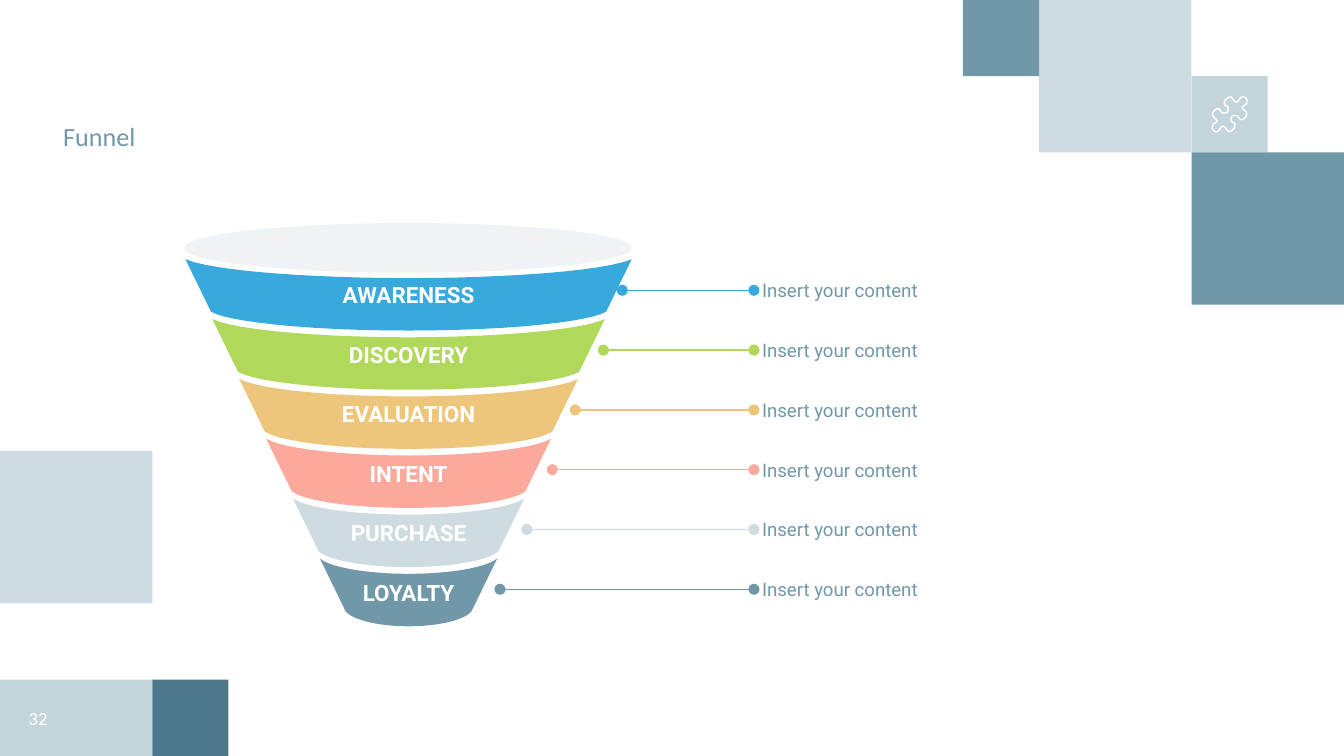
"""Build a slide with a six-stage marketing funnel and its callouts."""
from lxml.etree import SubElement
from pptx import Presentation
from pptx.dml.color import RGBColor
from pptx.enum.shapes import MSO_CONNECTOR, MSO_SHAPE
from pptx.enum.text import MSO_ANCHOR, PP_ALIGN
from pptx.oxml.ns import qn
from pptx.util import Inches, Pt

HUES = {
    "white": "FFFFFF", "steel": "7198A9", "mist": "CEDBE0", "deep": "4D778A",
    "pale": "EFF3F5", "blue": "37A9DD", "green": "B0D85B", "gold": "EDC67B",
    "coral": "FAA99C",
}
TITLE, PAGE, NOTE = "Funnel", "32", "Insert your content"
STAGES = [
    ("AWARENESS", "blue", 4.63),
    ("DISCOVERY", "green", 4.49),
    ("EVALUATION", "gold", 4.28),
    ("INTENT", "coral", 4.11),
    ("PURCHASE", "mist", 3.92),
    ("LOYALTY", "steel", 3.72),
]
WIDE, HIGH = 10, 10 * 9 / 16
UNIT = 0.567
RIGHT, FOOT = WIDE - 2 * UNIT, HIGH - UNIT
TILES = [
    (RIGHT, 2 * UNIT, 2, 2, "steel", 100),
    (RIGHT, UNIT, 1, 1, "steel", 41),
    (RIGHT - 2 * UNIT, 0, 2, 2, "mist", 100),
    (RIGHT - 3 * UNIT, 0, 1, 1, "steel", 100),
    (0, HIGH - 4 * UNIT, 2, 2, "mist", 100),
    (2 * UNIT, FOOT, 1, 1, "deep", 100),
    (0, FOOT, 2, 1, "steel", 41),
]
HALF = [
    (10, -6), (12, -7), (13, -9), (13, -11), (11, -13), (9, -13), (7, -11),
    (6, -9), (4, -9), (1, -13), (0, -13), (-3, -11), (-4, -9), (-4, -7),
    (-2, -6), (-1, -5), (-1, -3), (-2, -1), (-4, -1), (-6, -1), (-7, -3),
    (-8, -4), (-10, -4), (-12, -2), (-13, 0), (-12, 2), (-9, 5),
]
MID, TOP, STEP = 3.04, 1.93, 0.445
STEPS = 12

deck = Presentation()
deck.slide_width, deck.slide_height = Inches(WIDE), Inches(HIGH)
slide = deck.slides.add_slide(deck.slide_layouts[6])
shapes = slide.shapes


def tint(name):
    return RGBColor.from_string(HUES[name])


def paint(shape, name):
    shape.shadow.inherit = False
    shape.fill.solid()
    shape.fill.fore_color.rgb = tint(name)
    shape.line.fill.background()


def write(shape, text, size, face, hue, align=PP_ALIGN.LEFT,
          anchor=MSO_ANCHOR.MIDDLE, pad=0, bold=False):
    frame = shape.text_frame
    frame.word_wrap, frame.vertical_anchor = True, anchor
    frame.margin_left = frame.margin_right = Inches(pad)
    frame.margin_top = frame.margin_bottom = Inches(pad)
    para = frame.paragraphs[0]
    para.alignment = align
    run = para.add_run()
    run.text = text
    run.font.size, run.font.name, run.font.bold = Pt(size), face, bold
    run.font.color.rgb = tint(hue)


def label(x, y, w, h, *args, **opts):
    box = shapes.add_textbox(Inches(x), Inches(y), Inches(w), Inches(h))
    write(box, *args, **opts)


def block(kind, x, y, w, h, hue):
    shape = shapes.add_shape(kind, Inches(x), Inches(y), Inches(w), Inches(h))
    paint(shape, hue)
    return shape


def trace(dots):
    spots = [(Inches(x), Inches(y)) for x, y in dots]
    pen = shapes.build_freeform(*spots[0])
    pen.add_line_segments(spots[1:], close=True)
    return pen.convert_to_shape()


def arc(half, y, sag, near, far, knee):
    side = []
    for i in range(STEPS + 1):
        t = i / STEPS
        s = 1 - t
        x = s**3 + 3 * s * s * t * near + 3 * s * t * t * far
        drop = 3 * s * s * t * knee + 3 * s * t * t + t**3
        side.append((x * half, y + drop * sag))
    left = [(MID - x, v) for x, v in side]
    return left + [(MID + x, v) for x, v in side[-2::-1]]


def puzzle(x, y):
    ring = HALF + [(-a, -b) for a, b in HALF]
    dots = []
    for (a, b), (c, d) in zip(ring, ring[1:] + ring[:1]):
        for k in (0.25, 0.75):
            dots.append((x + (a + (c - a) * k) / 100,
                         y + (b + (d - b) * k) / 100))
    icon = trace(dots)
    icon.shadow.inherit = False
    icon.fill.background()
    icon.line.color.rgb, icon.line.width = tint("white"), Pt(0.75)


def link(x, end, y, hue):
    line = shapes.add_connector(MSO_CONNECTOR.STRAIGHT, Inches(x), Inches(y),
                                Inches(end), Inches(y))
    line.line.color.rgb, line.line.width = tint(hue), Pt(0.75)
    props = line._element.spPr
    stroke = props.find(qn("a:ln"))
    for tag in ("a:headEnd", "a:tailEnd"):
        SubElement(stroke, qn(tag), type="oval")
    SubElement(props, qn("a:effectLst"))


for x, y, cols, rows, hue, alpha in TILES:
    tile = block(MSO_SHAPE.RECTANGLE, x, y, cols * UNIT, rows * UNIT, hue)
    if alpha < 100:
        color = tile._element.spPr.find(qn("a:solidFill"))[0]
        SubElement(color, qn("a:alpha"), val=str(alpha * 1000))
puzzle(RIGHT + UNIT / 2, 1.5 * UNIT)
label(0.47, 0.72, 4.5, 0.41, TITLE, 14, "Calibri", "steel",
      anchor=MSO_ANCHOR.BOTTOM)
label(0, FOOT, UNIT, UNIT, PAGE, 10, "Calibri", "white",
      align=PP_ALIGN.CENTER, pad=0.1)

for i, (name, hue, start) in enumerate(STAGES):
    half, y, sag = 1.66 - 0.2 * i, TOP + STEP * i, 0.14 - 0.01 * i / 2
    rim = arc(half, y, sag, 0.87, 0.42, 0.64)
    base = arc(half - 0.19, y + 0.39, sag, 0.92, 0.54, 0.5)
    band = trace(rim + base[::-1])
    paint(band, hue)
    write(band, name, 12, "Roboto", "white", align=PP_ALIGN.CENTER,
          pad=0.04, bold=True)
    level = y + 0.23
    link(start, 5.61, level, hue)
    label(5.67, level - 0.16, 2.58, 0.32, NOTE, 10, "Roboto", "steel")
block(MSO_SHAPE.OVAL, 1.37, 1.66, 3.33, 0.37, "pale")

deck.save("out.pptx")
